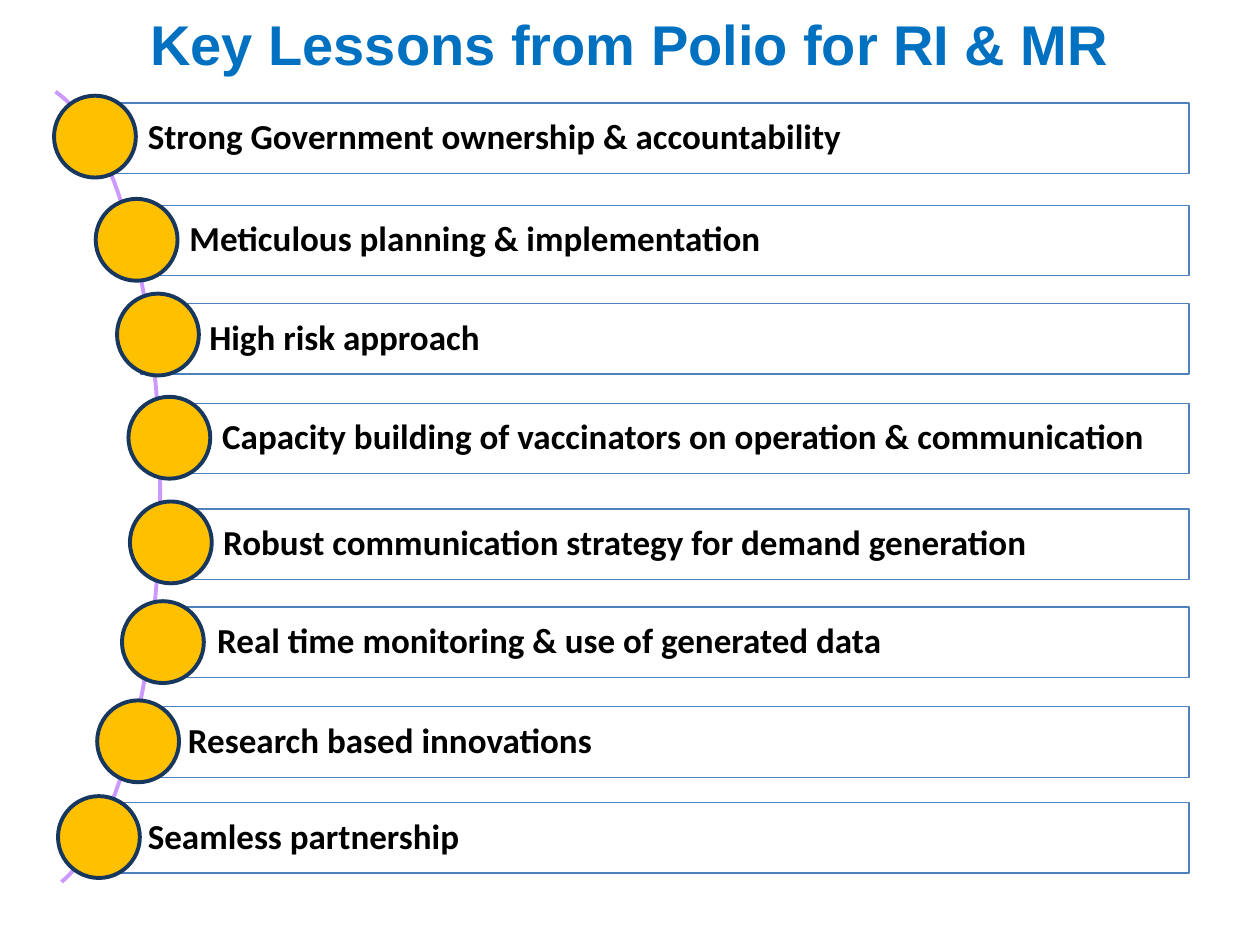
from pptx import Presentation
from pptx.dml.color import RGBColor
from pptx.enum.shapes import MSO_SHAPE as Shape
from pptx.enum.text import MSO_ANCHOR as Anchor, PP_ALIGN as Align
from pptx.util import Cm, Pt

BOX_RIGHT, BOX_HEIGHT, DOT_SIZE = 23.97, 1.42, 1.65

LESSONS = [
    ("Strong Government ownership & accountability", (1.6, 2.08), (1.09, 1.93)),
    ("Meticulous planning & implementation", (2.44, 4.14), (1.93, 4.01)),
    ("High risk approach", (2.84, 6.12), (2.36, 5.92)),
    ("Capacity building of vaccinators on operation & communication", (3.1, 8.13), (2.59, 8)),
    ("Robust communication strategy for demand generation", (3.12, 10.26), (2.62, 10.11)),
    ("Real time monitoring & use of generated data", (3, 12.24), (2.46, 12.12)),
    ("Research based innovations", (2.41, 14.25), (1.96, 14.12)),
    ("Seamless partnership", (1.6, 16.18), (1.17, 16.05)),
]

ARC = [
    ((1.12, 1.85), (2.34, 2.67), (3.23, 5.99), (3.23, 9.86)),
    ((3.23, 9.86), (3.23, 13.56), (2.41, 16.81), (1.24, 17.78)),
]


def color(value):
    return RGBColor.from_string(value)


def bezier(points, steps=40):
    for i in range(steps + 1):
        t = i / steps
        weights = ((1 - t) ** 3, 3 * t * (1 - t) ** 2, 3 * t ** 2 * (1 - t), t ** 3)
        yield tuple(Cm(sum(w * p[axis] for w, p in zip(weights, points))) for axis in (0, 1))


class Deck:
    title_font, body_font = "Arial", "Calibri"
    blue, black, white = "0070C0", "000000", "FFFFFF"
    border, arc_line, dot_fill, dot_line = "4F81BD", "CC99FF", "FFC000", "17375E"

    def __init__(self, slide):
        self.s = slide

    def style(self, sp, line, width, fill=None):
        sp.shadow.inherit = False
        sp.line.color.rgb = color(line)
        sp.line.width = Pt(width)
        if fill:
            sp.fill.solid()
            sp.fill.fore_color.rgb = color(fill)
        else:
            sp.fill.background()

    def set_text(self, tf, text, font, size, ink, align):
        tf.word_wrap = True
        tf.vertical_anchor = Anchor.MIDDLE
        p = tf.paragraphs[0]
        p.text = text
        p.alignment = align
        p.font.name, p.font.size, p.font.bold = font, Pt(size), True
        p.font.color.rgb = color(ink)
        return p

    def title(self, text):
        sp = self.s.shapes.title
        sp.left, sp.top, sp.width, sp.height = Cm(0), Cm(0), Cm(25.4), Cm(1.73)
        sp.fill.solid()
        sp.fill.fore_color.rgb = color(self.white)
        self.set_text(sp.text_frame, text, self.title_font, 32, self.blue, Align.CENTER)

    def arc(self, curves):
        points = [point for curve in curves for point in bezier(curve)]
        builder = self.s.shapes.build_freeform(*points[0])
        builder.add_line_segments(points[1:], close=False)
        self.style(builder.convert_to_shape(), self.arc_line, 2.25)

    def box(self, text, left, top):
        sp = self.s.shapes.add_shape(
            Shape.RECTANGLE, Cm(left), Cm(top), Cm(BOX_RIGHT - left), Cm(BOX_HEIGHT))
        self.style(sp, self.border, 0.75)
        tf = sp.text_frame
        tf.margin_left = Cm(1.38)
        tf.margin_top = tf.margin_right = tf.margin_bottom = Cm(0.1)
        p = self.set_text(tf, text, self.body_font, 20, self.black, Align.LEFT)
        p.line_spacing = 0.9

    def dot(self, left, top):
        sp = self.s.shapes.add_shape(
            Shape.OVAL, Cm(left), Cm(top), Cm(DOT_SIZE), Cm(DOT_SIZE))
        self.style(sp, self.dot_line, 2.25, self.dot_fill)


def main():
    prs = Presentation()
    prs.slide_width, prs.slide_height = Cm(25.4), Cm(19.05)
    deck = Deck(prs.slides.add_slide(prs.slide_layouts[5]))
    deck.title("Key Lessons from Polio for RI & MR")
    deck.arc(ARC)
    for text, box_at, dot_at in LESSONS:
        deck.box(text, *box_at)
        deck.dot(*dot_at)
    prs.save("out.pptx")


if __name__ == "__main__":
    main()
